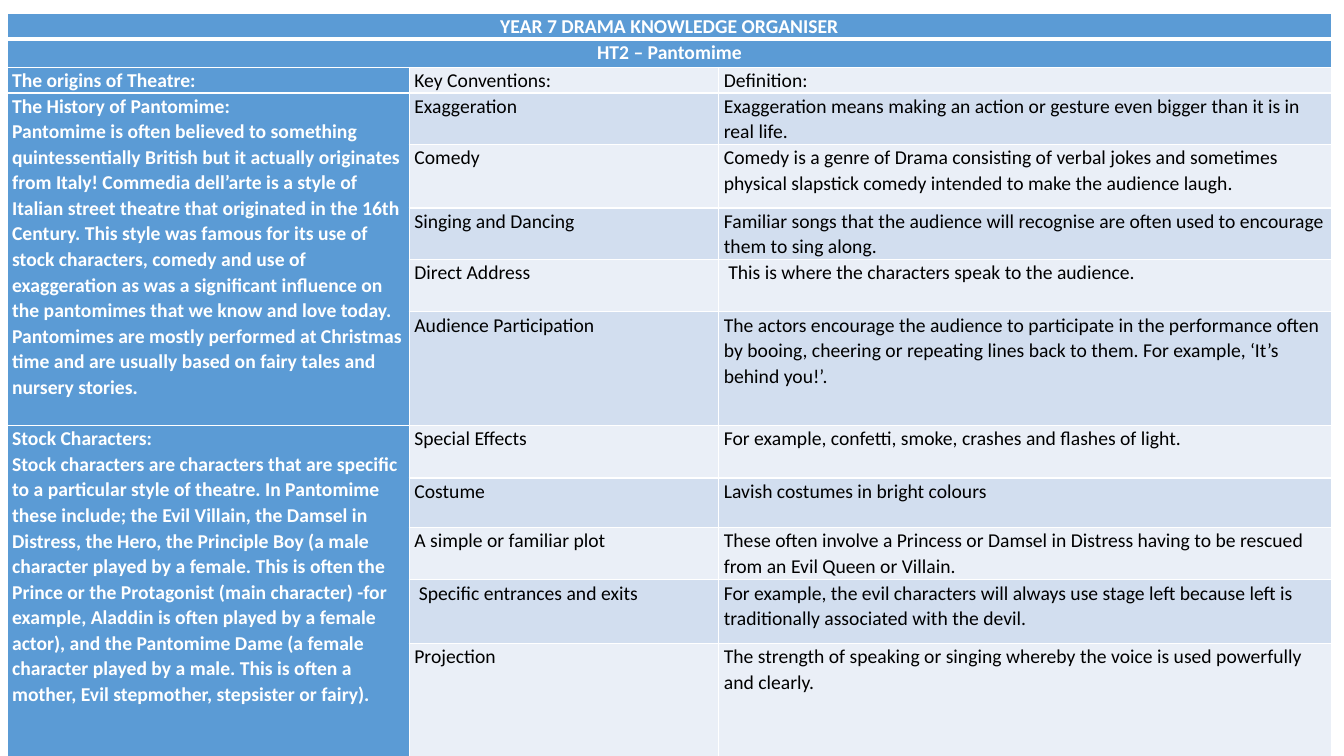
"""Build the Year 7 drama knowledge organiser on pantomime as one table."""
from dataclasses import dataclass

from lxml import etree
from pptx import Presentation
from pptx.dml.color import RGBColor
from pptx.enum.text import PP_ALIGN
from pptx.oxml.ns import qn
from pptx.table import Table, _Cell
from pptx.util import Inches, Pt

CENTER, LEFT = PP_ALIGN.CENTER, PP_ALIGN.LEFT
BLUE, PALE, MID, WHITE, BLACK = "5B9BD5", "EAEFF7", "D2DEEF", "FFFFFF", "000000"
COLUMN_WIDTHS = (3.99, 3.07, 6.08)
ROW_HEIGHTS = (0.26, 0.28, 0.25, 0.51, 0.63, 0.51, 0.52, 1.13, 0.52, 0.49, 0.52, 0.63, 1.12)
FIRST_CONVENTION_ROW = 2


@dataclass(frozen=True)
class Heading:
    """A bold blue cell and the last row and column that it covers."""
    row: int
    last_row: int
    last_column: int
    text: str
    align: PP_ALIGN = LEFT


HEADINGS = (
    Heading(0, 0, 2, "YEAR 7 DRAMA KNOWLEDGE ORGANISER", CENTER),
    Heading(1, 1, 2, "HT2 – Pantomime", CENTER),
    Heading(2, 2, 0, "The origins of Theatre:"),
    Heading(3, 7, 0, "The History of Pantomime:\n"
            "Pantomime is often believed to something quintessentially British but it actually "
            "originates from Italy! Commedia dell’arte is a style of Italian street theatre that "
            "originated in the 16th Century. This style was famous for its use of stock characters, "
            "comedy and use of exaggeration as was a significant influence on the pantomimes that "
            "we know and love today. Pantomimes are mostly performed at Christmas time and are "
            "usually based on fairy tales and nursery stories."),
    Heading(8, 12, 0, "Stock Characters:\n"
            "Stock characters are characters that are specific to a particular style of theatre. "
            "In Pantomime these include; the Evil Villain, the Damsel in Distress, the Hero, the "
            "Principle Boy (a male character played by a female. This is often the Prince or the "
            "Protagonist (main character) -for example, Aladdin is often played by a female actor), "
            "and the Pantomime Dame (a female character played by a male. This is often a mother, "
            "Evil stepmother, stepsister or fairy)."),
)

CONVENTIONS = (
    ("Key Conventions:", "Definition:"),
    ("Exaggeration",
     "Exaggeration means making an action or gesture even bigger than it is in real life."),
    ("Comedy", "Comedy is a genre of Drama consisting of verbal jokes and sometimes physical "
     "slapstick comedy intended to make the audience laugh."),
    ("Singing and Dancing", "Familiar songs that the audience will recognise are often used to "
     "encourage them to sing along."),
    ("Direct Address", " This is where the characters speak to the audience."),
    ("Audience Participation", "The actors encourage the audience to participate in the "
     "performance often by booing, cheering or repeating lines back to them. For example, "
     "‘It’s behind you!’."),
    ("Special Effects", "For example, confetti, smoke, crashes and flashes of light."),
    ("Costume", "Lavish costumes in bright colours"),
    ("A simple or familiar plot", "These often involve a Princess or Damsel in Distress having "
     "to be rescued from an Evil Queen or Villain."),
    (" Specific entrances and exits", "For example, the evil characters will always use stage "
     "left because left is traditionally associated with the devil."),
    ("Projection", "The strength of speaking or singing whereby the voice is used powerfully "
     "and clearly."),
)


def colour(value: str) -> RGBColor:
    return RGBColor.from_string(value)


def set_borders(cell: _Cell, top: float, bottom: float) -> None:
    properties = cell._tc.get_or_add_tcPr()
    for tag, width in (("a:lnL", 1), ("a:lnR", 1), ("a:lnT", top), ("a:lnB", bottom)):
        line = etree.SubElement(properties, qn(tag), w=str(Pt(width)))
        fill = etree.SubElement(line, qn("a:solidFill"))
        etree.SubElement(fill, qn("a:srgbClr"), val=WHITE)


def fill_cell(cell: _Cell, fill: str) -> None:
    cell.fill.solid()
    cell.fill.fore_color.rgb = colour(fill)
    cell.margin_left = cell.margin_right = Inches(0.05)
    cell.margin_top = cell.margin_bottom = 0


def write_cell(cell: _Cell, text: str, ink: str, bold: bool, align: PP_ALIGN = LEFT) -> None:
    cell.text_frame.text = text
    for para in cell.text_frame.paragraphs:
        para.alignment = align
        para.line_spacing = 1.07
        for span in para.runs:
            span.font.name = "Calibri"
            span.font.size = Pt(14)
            span.font.bold = bold
            span.font.color.rgb = colour(ink)


def size_table(table: Table) -> None:
    for column, width in zip(table.columns, COLUMN_WIDTHS):
        column.width = Inches(width)
    for row, height in zip(table.rows, ROW_HEIGHTS):
        row.height = Inches(height)


def style_grid(table: Table) -> None:
    for row_index, row in enumerate(table.rows):
        band = MID if row_index % 2 else PALE
        for column_index, cell in enumerate(row.cells):
            is_heading = column_index == 0 or row_index < FIRST_CONVENTION_ROW
            set_borders(cell, 3 if row_index == 1 else 1, 3 if row_index == 0 else 1)
            fill_cell(cell, BLUE if is_heading else band)


def write_headings(table: Table) -> None:
    for heading in HEADINGS:
        cell = table.cell(heading.row, 0)
        if heading.last_row > heading.row or heading.last_column > 0:
            cell.merge(table.cell(heading.last_row, heading.last_column))
        write_cell(cell, heading.text, WHITE, True, heading.align)


def write_conventions(table: Table) -> None:
    for row_index, texts in enumerate(CONVENTIONS, FIRST_CONVENTION_ROW):
        for column_index, text in enumerate(texts, 1):
            write_cell(table.cell(row_index, column_index), text, BLACK, False)


def main() -> None:
    deck = Presentation()
    deck.slide_width, deck.slide_height = Inches(13.33), Inches(7.5)
    page = deck.slides.add_slide(deck.slide_layouts[6])
    table = page.shapes.add_table(
        len(ROW_HEIGHTS), len(COLUMN_WIDTHS), Inches(0.07), Inches(0.13),
        Inches(sum(COLUMN_WIDTHS)), Inches(sum(ROW_HEIGHTS))).table
    size_table(table)
    style_grid(table)
    write_headings(table)
    write_conventions(table)
    deck.save("out.pptx")


if __name__ == "__main__":
    main()
